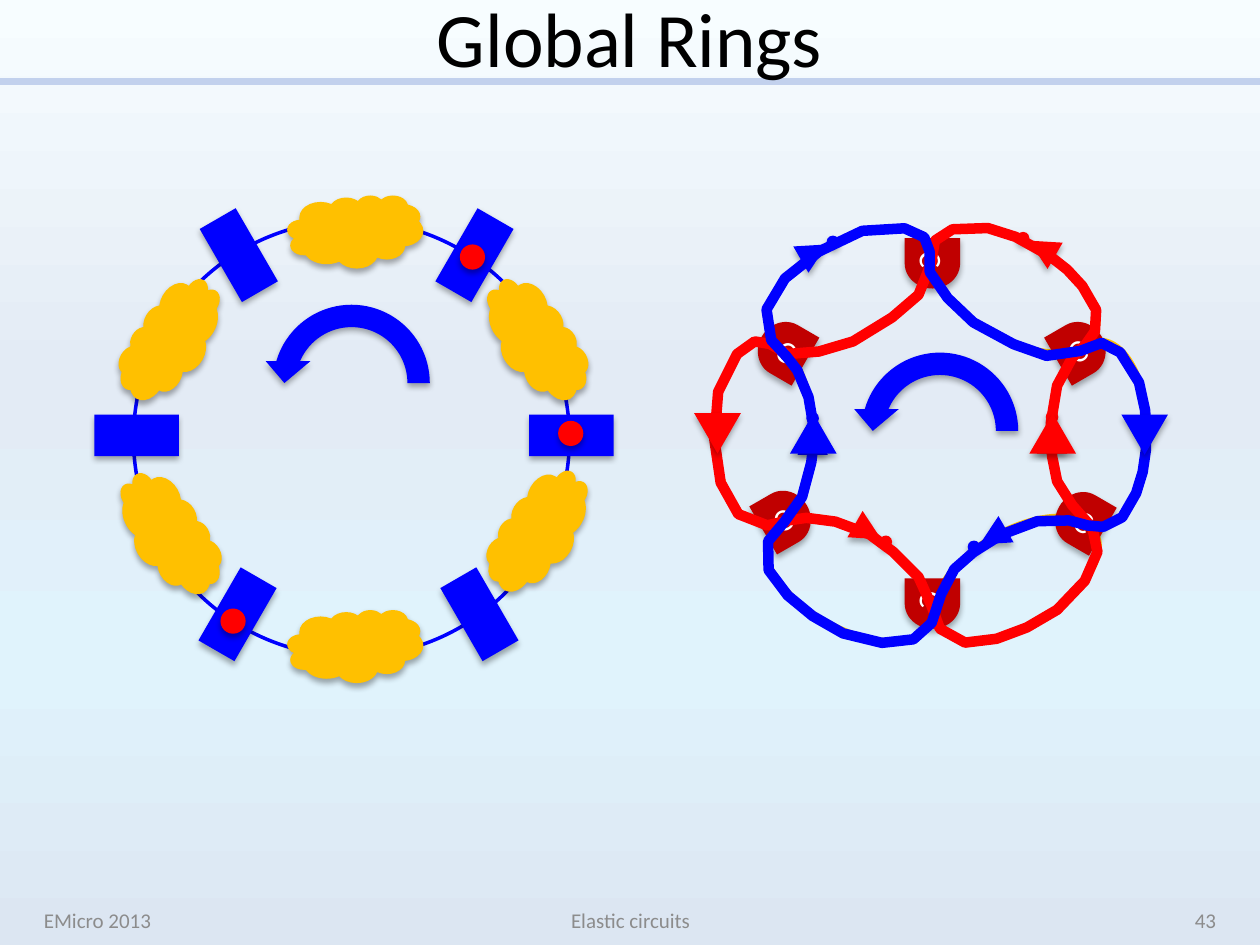
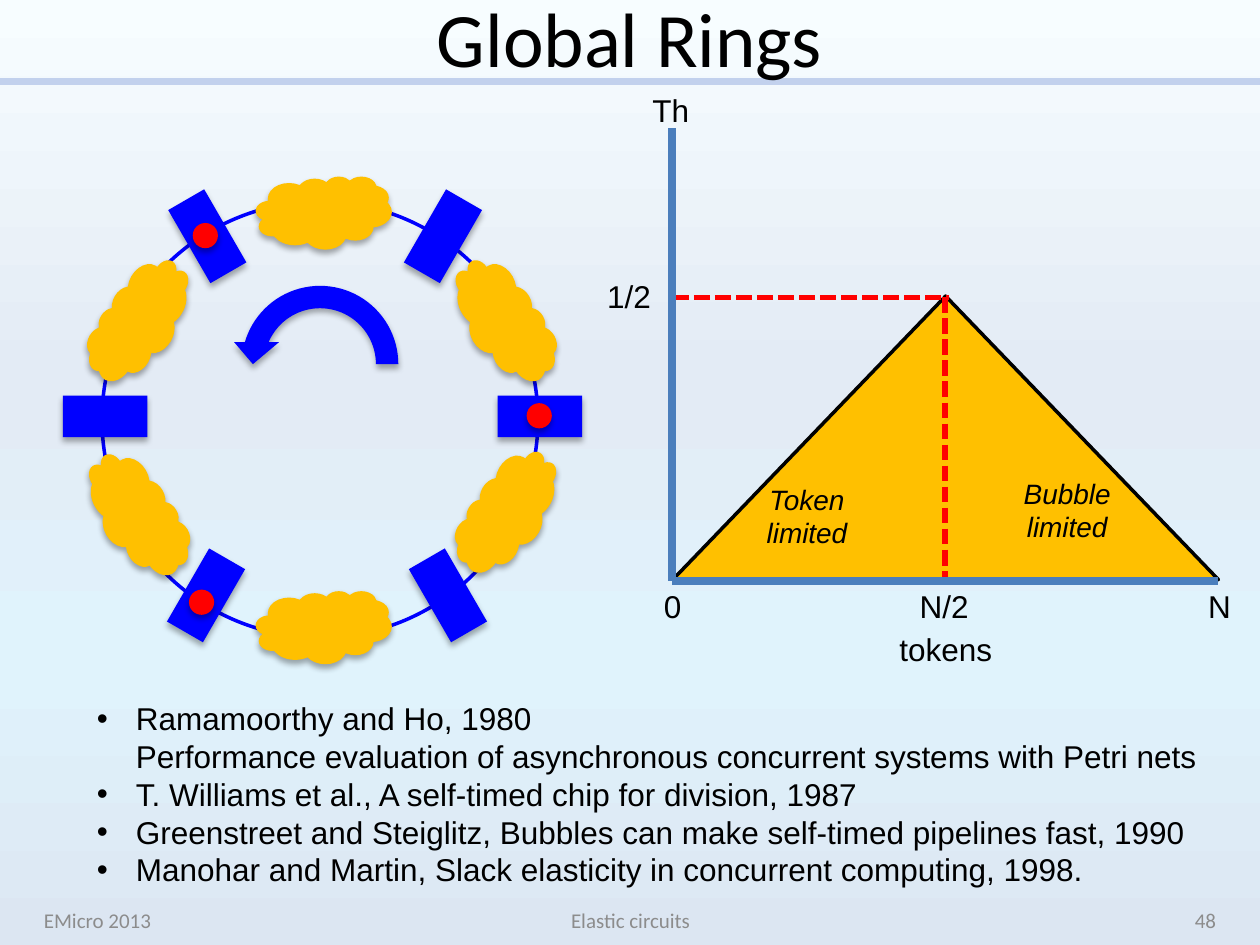
import pptx
import pptx.dml.color
import pptx.enum.dml
import pptx.enum.shapes
import pptx.enum.text
import pptx.util
from lxml import etree
from pptx.oxml.ns import qn

PX = 9144  # one px is a hundredth of an inch
SHAPE = pptx.enum.shapes.MSO_SHAPE
ALIGN = pptx.enum.text.PP_ALIGN
ANCHOR = pptx.enum.text.MSO_ANCHOR
COLORS = {
    "band": "C2D1ED", "blue": "0000FF", "red": "FF0000", "amber": "FFC000",
    "dark_red": "C00000", "axis": "4B7EBC", "black": "000000",
    "white": "FFFFFF", "footer": "8C8C8C",
}
BACKGROUND = [(0, "F7FDFF"), (40, "E3EBF5"), (70, "E0F3FC"), (100, "DCE6F2")]


def rgb(name):
    return pptx.dml.color.RGBColor.from_string(COLORS[name])


def write(tf, text, size=18, font="Arial", color="black", align=None,
          anchor=ANCHOR.TOP, italic=False, bullet=False):
    """Fill a text frame; \\n parts paragraphs, \\v breaks a line."""
    tf.vertical_anchor = anchor
    for i, line in enumerate(text.split("\n")):
        p = tf.add_paragraph() if i else tf.paragraphs[0]
        p.text = line
        p.alignment = align
        for r in p.runs:
            r.font.size = pptx.util.Pt(size)
            r.font.name = font
            r.font.italic = italic
            r.font.color.rgb = rgb(color)
        if bullet:
            pPr = p._p.get_or_add_pPr()
            pPr.set("marL", str(31 * PX))
            pPr.set("indent", str(-31 * PX))
            etree.SubElement(pPr, qn("a:buFont")).set("typeface", "Arial")
            etree.SubElement(pPr, qn("a:buChar")).set("char", "•")


class Deck:
    def __init__(self):
        self.prs = pptx.Presentation()
        self.prs.slide_width = 1000 * PX
        self.prs.slide_height = 750 * PX
        self.s = None

    def slide(self, title, number):
        self.s = self.prs.slides.add_slide(self.prs.slide_layouts[6])
        fill = self.s.background.fill
        fill.gradient()
        fill.gradient_angle = 270
        stops = self.s.element.find(".//" + qn("a:gsLst"))
        for gs in list(stops):
            stops.remove(gs)
        for pos, color in BACKGROUND:
            gs = etree.SubElement(stops, qn("a:gs"), pos=str(pos * 1000))
            etree.SubElement(gs, qn("a:srgbClr"), val=color)
        self.line((0, 65), (1000, 65), "band", 4)
        self.text(title, 50, 0, 900, 58, wrap=True, size=44, font="Calibri",
                  align=ALIGN.CENTER, anchor=ANCHOR.MIDDLE)
        for text, x, w, align in [("EMicro 2013", 25, 233, ALIGN.LEFT),
                                  ("Elastic circuits", 342, 317, ALIGN.CENTER),
                                  (str(number), 742, 233, ALIGN.RIGHT)]:
            self.text(text, x, 710, w, 40, wrap=True, size=12, font="Calibri",
                      color="footer", align=align, anchor=ANCHOR.MIDDLE)

    def text(self, text, x, y, w, h, wrap=False, **style):
        sp = self.s.shapes.add_textbox(x * PX, y * PX, w * PX, h * PX)
        tf = sp.text_frame
        tf.word_wrap = wrap
        if not wrap:
            tf.auto_size = pptx.enum.text.MSO_AUTO_SIZE.SHAPE_TO_FIT_TEXT
        write(tf, text, **style)

    def paint(self, sp, fill=None, line=None, width=2, shadow=False, rot=0, flip=""):
        sp.rotation = rot
        if flip:
            sp.element.spPr.xfrm.set("flip" + flip, "1")
        if fill:
            sp.fill.solid()
            sp.fill.fore_color.rgb = rgb(fill)
        else:
            sp.fill.background()
        if line:
            sp.line.color.rgb = rgb(line)
            sp.line.width = pptx.util.Pt(width)
        else:
            sp.line.fill.background()
        sp.shadow.inherit = False
        if shadow:
            effects = sp.element.spPr.find(qn("a:effectLst"))
            drop = etree.SubElement(effects, qn("a:outerShdw"), blurRad="44450",
                                    dist="27940", dir="5400000", rotWithShape="0")
            color = etree.SubElement(drop, qn("a:srgbClr"), val=COLORS["black"])
            etree.SubElement(color, qn("a:alpha"), val="32000")
        return sp

    def shape(self, kind, x, y, w, h, fill=None, **style):
        sp = self.s.shapes.add_shape(kind, x * PX, y * PX, w * PX, h * PX)
        return self.paint(sp, fill, **style)

    def solid(self, kind, x, y, w, h, fill, rot=0, flip=""):
        return self.shape(kind, x, y, w, h, fill, shadow=True, rot=rot, flip=flip)

    def loop(self, points, color, rot=0):
        start, *rest = points
        fb = self.s.shapes.build_freeform(*start, scale=PX)
        fb.add_line_segments(rest, close=True)
        self.paint(fb.convert_to_shape(), line=color, width=6, rot=rot)

    def line(self, start, end, color, width, dash=None):
        c = self.s.shapes.add_connector(
            pptx.enum.shapes.MSO_CONNECTOR.STRAIGHT,
            *(v * PX for v in (*start, *end)))
        c.line.color.rgb = rgb(color)
        c.line.width = pptx.util.Pt(width)
        if dash:
            c.line.dash_style = dash
        etree.SubElement(c.element.spPr, qn("a:effectLst"))

    def turn_arrow(self, x, y):
        self.solid(SHAPE.CIRCULAR_ARROW, x, y, 142, 142, "blue", flip="H")

    def register_ring(self, x, y, tokens):
        """Ring of registers and logic clouds; (x, y) is its top left corner."""
        self.shape(SHAPE.OVAL, x + 31, y + 20, 346, 346, line="blue")
        for dx, dy, rot in [(0, 174, 0), (345, 174, 0), (80, 316, 120),
                            (272, 316, 60), (268, 31, 120), (81, 31, 60)]:
            self.solid(SHAPE.RECTANGLE, x + dx, y + dy, 67, 33, "blue", rot=rot)
        for dx, dy, rot, flip in [(153, 0, 0, ""), (153, 329, 0, ""),
                                  (296, 86, 60, ""), (5, 240, 60, ""),
                                  (7, 86, 300, "H"), (299, 238, 300, "H")]:
            self.solid(SHAPE.CLOUD, x + dx, y + dy, 108, 58, "amber", rot, flip)
        self.turn_arrow(x + 133, y + 78)
        for dx, dy in tokens:
            self.solid(SHAPE.OVAL, x + dx, y + dy, 20, 20, "red")


RED_LOOP = [
    (739, 209), (729, 234), (708, 252), (677, 271), (650, 279), (625, 281),
    (611, 273), (599, 271), (585, 281), (570, 311), (567, 349), (572, 383),
    (586, 408), (609, 417), (626, 413), (640, 411), (663, 414), (690, 424),
    (709, 438), (729, 458), (739, 480), (746, 499), (766, 510), (791, 507),
    (815, 498), (839, 484), (861, 461), (871, 438), (867, 419), (851, 401),
    (839, 382), (835, 362), (834, 336), (839, 306), (851, 284), (862, 273),
    (869, 263), (870, 246), (859, 227), (847, 214), (833, 203), (806, 188),
    (784, 181), (756, 182), (742, 191),
]


def handshake_rings(d):
    # Amber ellipses under the handshake wires
    for x, y, rot in [(733, 191, 30), (601, 420, 30), (800, 304, 90),
                      (601, 191, 330), (734, 420, 330), (534, 304, 90)]:
        d.shape(SHAPE.OVAL, x, y, 146, 77, line="amber", rot=rot)
    d.turn_arrow(675, 271)
    # C elements
    for x, y, rot, flip in [(603, 389, 330, ""), (602, 255, 30, "H"),
                            (837, 255, 330, ""), (838, 390, 30, "H"),
                            (720, 187, 90, ""), (720, 457, 90, "")]:
        sp = d.solid(SHAPE.FLOWCHART_DELAY, x, y, 40, 44, "dark_red", rot, flip)
        write(sp.text_frame, "C", font="Calibri", color="white",
              align=ALIGN.CENTER, anchor=ANCHOR.MIDDLE)
    # Inverters: a triangle and its bubble
    for color, rot, tx, ty, bx, by in [
            ("red", 0, 823, 336, 830, 326), ("red", 120, 677, 410, 698, 425),
            ("red", 300, 815, 185, 807, 184), ("blue", 0, 633, 337, 640, 327),
            ("blue", 240, 776, 414, 768, 429), ("blue", 60, 634, 188, 656, 187)]:
        d.solid(SHAPE.FLOWCHART_EXTRACT, tx, ty, 24, 24, color, rot)
        d.solid(SHAPE.FLOWCHART_CONNECTOR, bx, by, 10, 10, color, rot)
    # The blue wire is the red one, moved and turned by 60 degrees
    blue_loop = [(x + 10, y - 16) for x, y in RED_LOOP]
    for color, points, rot, up, down in [
            ("red", RED_LOOP, 0, (817, 328), (551, 328)),
            ("blue", blue_loop, 60, (627, 328), (890, 329))]:
        d.loop(points, color, rot)
        d.solid(SHAPE.ISOSCELES_TRIANGLE, *up, 37, 32, color)
        d.solid(SHAPE.ISOSCELES_TRIANGLE, *down, 37, 32, color, flip="V")


def throughput_plot(d):
    dash = pptx.enum.dml.MSO_LINE.SQUARE_DOT
    d.line((750, 236), (750, 461), "red", 3, dash)
    d.line((534, 236), (753, 236), "red", 3, dash)
    d.line((533, 461), (967, 461), "axis", 4.5)
    d.line((533, 461), (533, 102), "axis", 4.5)
    for text, x, y, w in [("0", 517, 461, 34), ("N", 949, 461, 38),
                          ("N/2", 720, 461, 59), ("tokens", 704, 495, 95),
                          ("Th", 508, 67, 50), ("1/2", 472, 215, 55)]:
        d.text(text, x, y, w, 40)
    for text, x, y, w in [("Token\vlimited", 598, 378, 85),
                          ("Bubble\vlimited", 802, 373, 90)]:
        d.text(text, x, y, w, 64, size=16, italic=True, align=ALIGN.CENTER)


def main():
    d = Deck()

    # Register ring beside its handshake circuit
    d.slide("Global Rings", 43)
    d.register_ring(75, 155, [(290, 39), (100, 328), (368, 179)])
    handshake_rings(d)

    # Register ring beside its throughput
    d.slide("Global Rings", 48)
    d.shape(SHAPE.ISOSCELES_TRIANGLE, 534, 235, 433, 225, "amber", line="black")
    d.register_ring(50, 140, [(103, 37), (100, 328), (368, 180)])
    throughput_plot(d)
    d.text("Ramamoorthy and Ho, 1980\v"
           "Performance evaluation of asynchronous concurrent systems with Petri nets\n"
           "T. Williams et al., A self-timed chip for division, 1987\n"
           "Greenstreet and Steiglitz, Bubbles can make self-timed pipelines fast, 1990\n"
           "Manohar and Martin, Slack elasticity in concurrent computing, 1998.",
           67, 550, 895, 162, bullet=True)

    d.prs.save("out.pptx")


if __name__ == "__main__":
    main()
